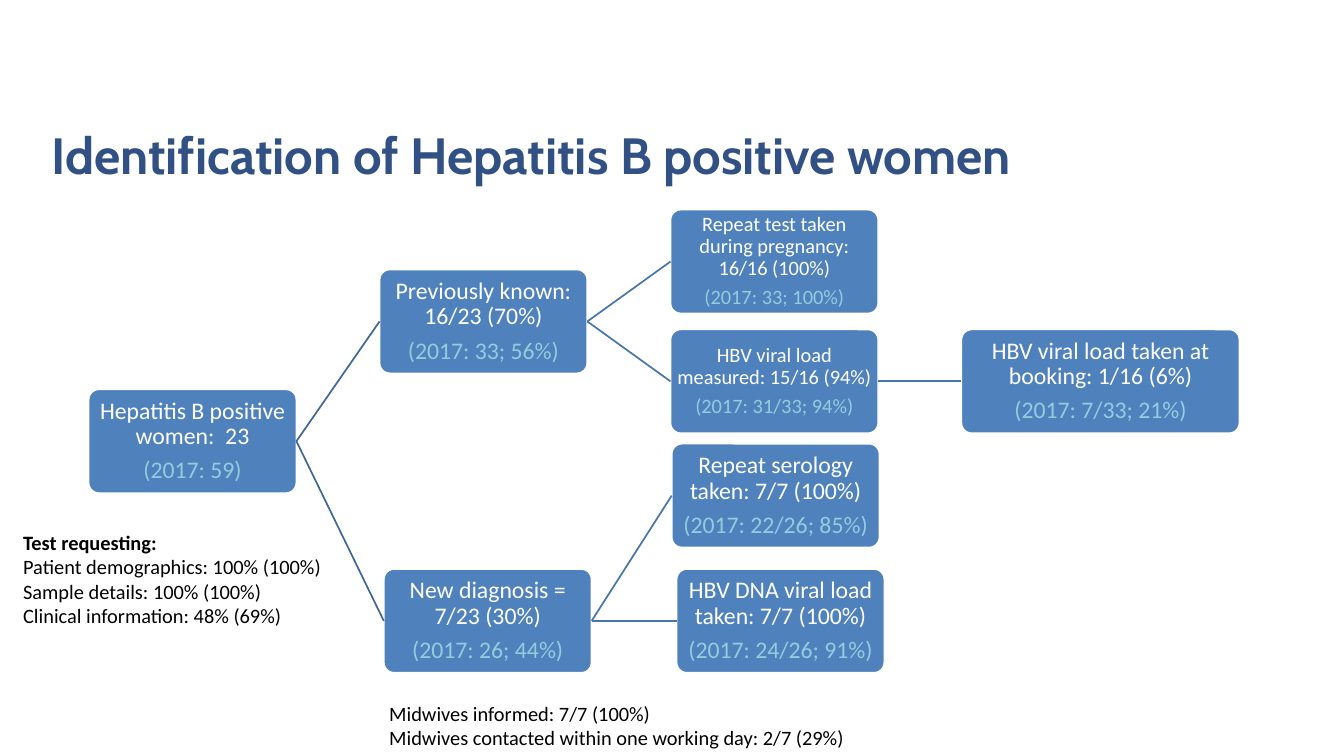
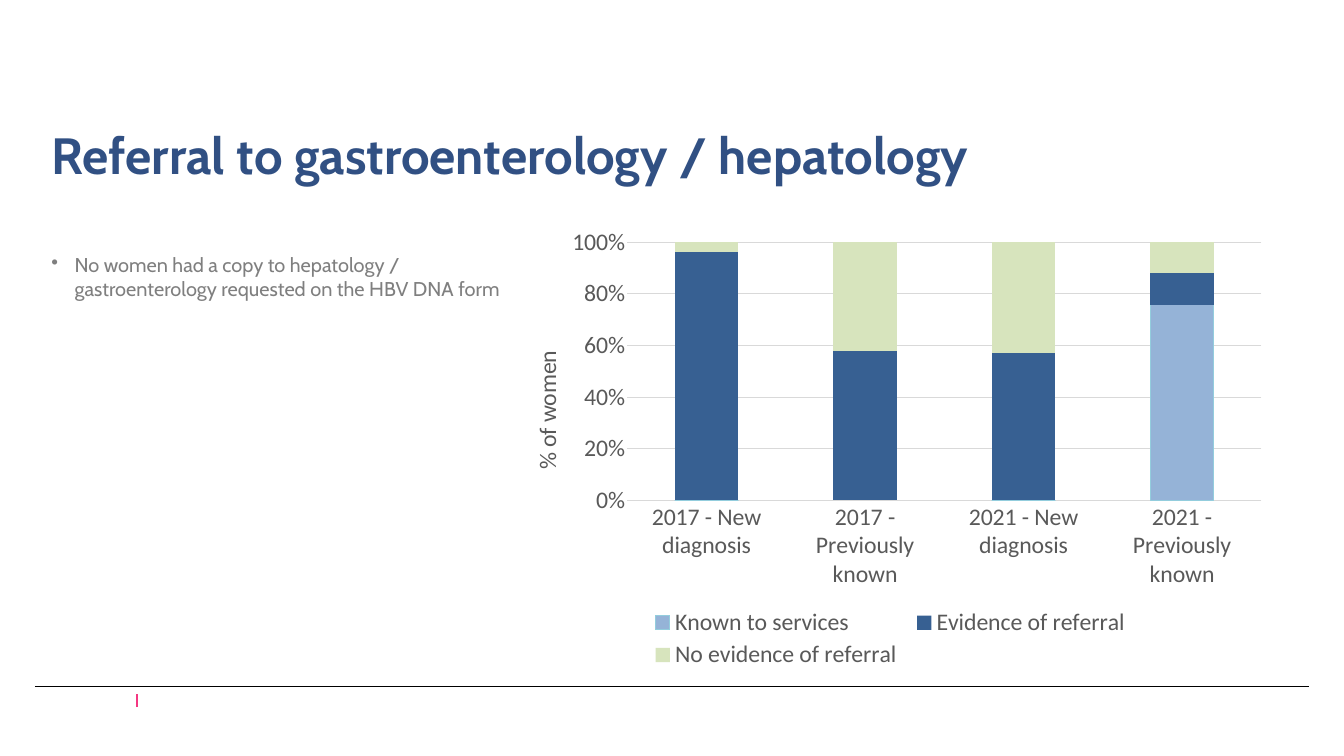
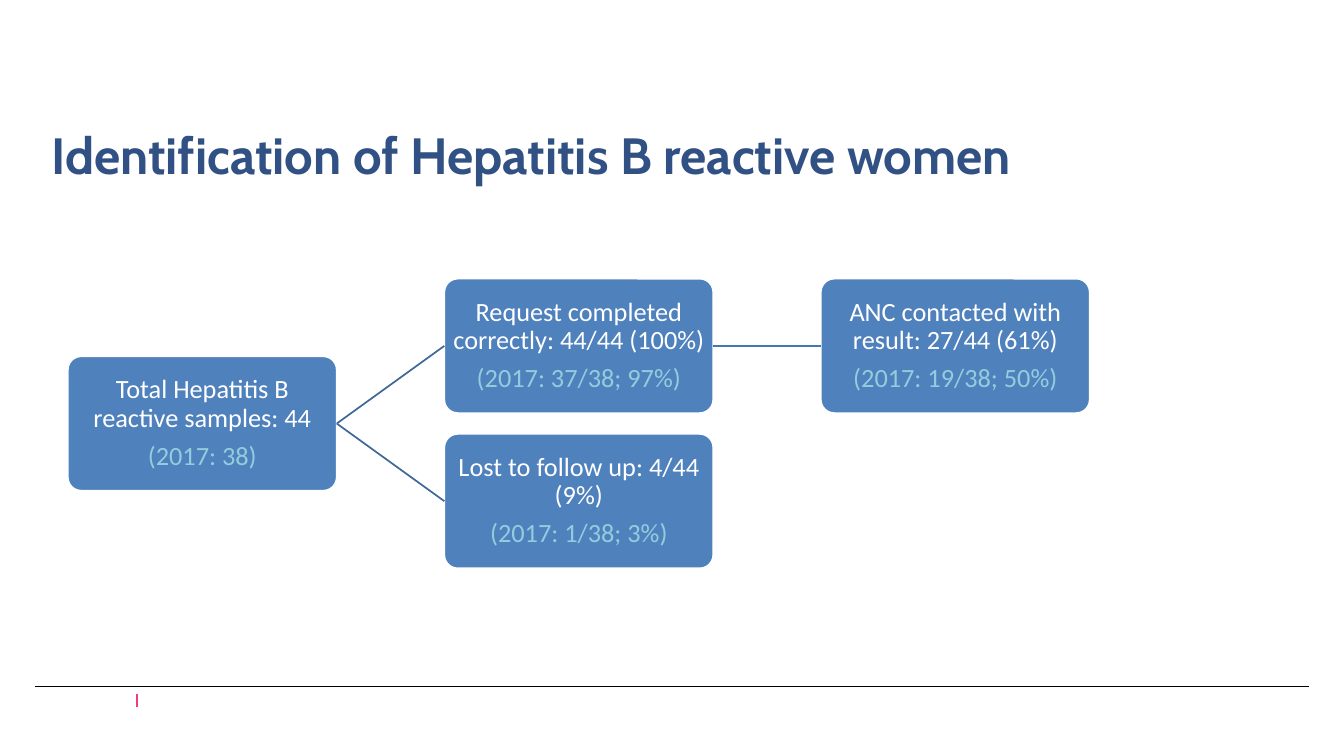
from pptx import Presentation
from pptx.chart.data import CategoryChartData
from pptx.dml.color import RGBColor
from pptx.enum.chart import XL_CHART_TYPE, XL_LEGEND_POSITION, XL_TICK_MARK
from pptx.enum.shapes import MSO_CONNECTOR, MSO_SHAPE
from pptx.enum.text import MSO_ANCHOR, PP_ALIGN
from pptx.oxml import parse_xml
from pptx.oxml.ns import nsdecls
from pptx.util import Emu, Pt

EMU_PER_PX = 9144
TITLE_FONT = "Cabin"
BODY_FONT = "Calibri"
NAVY = "315083"
BLUE = "4F81BD"
PALE_BLUE = "93CDDD"
ROOT_LINE = "3F6797"
BRANCH_LINE = "4875AC"
WHITE = "FFFFFF"
BLACK = "000000"
GREY = "7F7F7F"
CHART_TEXT = "595959"
CHART_LINE = "D9D9D9"
PINK = "F43882"


def px(*lengths):
    """Turn whole px lengths into EMU."""
    return [Emu(length * EMU_PER_PX) for length in lengths]


def rgb(colour):
    """Turn a hex string into a colour."""
    return RGBColor.from_string(colour)


def set_font(font, size, colour, name=BODY_FONT, bold=False):
    """Format a font."""
    font.size = Pt(size)
    font.color.rgb = rgb(colour)
    font.name = name
    font.bold = bold


def set_line(line, colour, width):
    """Format an outline."""
    line.color.rgb = rgb(colour)
    line.width = Pt(width)


def set_margins(frame, margin):
    """Give a text frame equal margins in px and let it wrap."""
    frame.word_wrap = True
    frame.margin_left, frame.margin_top, frame.margin_right, frame.margin_bottom = px(*[margin] * 4)


def place_part(chart, query, index, **fractions):
    """Fix a part of a chart at fractions of the chart area."""
    part = chart.element.xpath(query)[0]
    for layout in part.xpath("c:layout"):
        part.remove(layout)
    inner = '<c:layoutTarget val="inner"/>' if query.endswith("plotArea") else ""
    modes = '<c:xMode val="edge"/><c:yMode val="edge"/>'
    values = "".join(f'<c:{key} val="{value}"/>' for key, value in fractions.items())
    part.insert(index, parse_xml(
        f'<c:layout {nsdecls("c")}><c:manualLayout>{inner}{modes}{values}</c:manualLayout></c:layout>'))


class Deck:
    """The presentation's style and its current slide."""

    def __init__(self):
        """Start an empty wide presentation."""
        self.presentation = Presentation()
        self.presentation.slide_width, self.presentation.slide_height = px(2199, 1237)
        self.slide = None

    def new_slide(self, title, footer=True):
        """Add a slide with its title and footer rule."""
        self.slide = self.presentation.slides.add_slide(self.presentation.slide_layouts[5])
        shape = self.slide.shapes.title
        shape.left, shape.top, shape.width, shape.height = px(84, 202, 2030, 101)
        frame = shape.text_frame
        frame.text = title
        set_margins(frame, 0)
        frame.vertical_anchor = MSO_ANCHOR.TOP
        paragraph = frame.paragraphs[0]
        paragraph.alignment = PP_ALIGN.LEFT
        set_font(paragraph.runs[0].font, 60, NAVY, TITLE_FONT, True)
        if footer:
            self.line((57, 1122, 2141, 1122), BLACK, 0.41)
            self.line((224, 1157, 224, 1136), PINK, 1.65)

    def line(self, ends, colour, width):
        """Add a straight line between two points."""
        connector = self.slide.shapes.add_connector(MSO_CONNECTOR.STRAIGHT, *px(*ends))
        set_line(connector.line, colour, width)
        connector._element.spPr.append(parse_xml(f'<a:effectLst {nsdecls("a")}/>'))
        return connector

    def card(self, box, main_text, earlier_text, size=28, parent=None, colour=BRANCH_LINE):
        """Add a rounded card and join it to its parent."""
        shape = self.slide.shapes.add_shape(MSO_SHAPE.ROUNDED_RECTANGLE, *px(*box))
        shape.adjustments[0] = 0.1
        shape.shadow.inherit = False
        shape.fill.solid()
        shape.fill.fore_color.rgb = rgb(BLUE)
        set_line(shape.line, WHITE, 2)
        frame = shape.text_frame
        frame.text = f"{main_text}\n{earlier_text}"
        set_margins(frame, 2)
        frame.vertical_anchor = MSO_ANCHOR.MIDDLE
        for paragraph, text_colour in zip(frame.paragraphs, (WHITE, PALE_BLUE)):
            paragraph.alignment = PP_ALIGN.CENTER
            paragraph.line_spacing = 0.9
            set_font(paragraph.runs[0].font, size, text_colour)
        frame.paragraphs[0].space_after = Pt(round(size * 0.35))
        if parent is not None:
            connector = self.line((0, 0, 1, 1), colour, 2)
            connector.begin_connect(parent, 3)
            connector.end_connect(shape, 1)
        return shape

    def plain_lines(self, box, lines, heading=False):
        """Add plain lines, the first of them bold if it is a heading."""
        frame = self.slide.shapes.add_textbox(*px(*box)).text_frame
        frame.word_wrap = True
        frame.text = "\n".join(lines)
        for index, paragraph in enumerate(frame.paragraphs):
            set_font(paragraph.runs[0].font, 24, BLACK, bold=heading and index == 0)

    def bullet(self, box, text):
        """Add a bulleted paragraph."""
        frame = self.slide.shapes.add_textbox(*px(*box)).text_frame
        set_margins(frame, 0)
        frame.text = text
        paragraph = frame.paragraphs[0]
        properties = paragraph._p.get_or_add_pPr()
        indent = 38 * EMU_PER_PX
        properties.set("marL", str(indent))
        properties.set("indent", str(-indent))
        properties.append(parse_xml(f'<a:buChar {nsdecls("a")} char="•"/>'))
        set_font(paragraph.runs[0].font, 23.5, GREY, TITLE_FONT)

    def stacked_chart(self, box, categories, series_rows, axis_title):
        """Add a 100% stacked column chart."""
        data = CategoryChartData()
        data.categories = categories
        for name, values, _ in series_rows:
            data.add_series(name, values)
        chart = self.slide.shapes.add_chart(
            XL_CHART_TYPE.COLUMN_STACKED_100, *px(*box), data).chart
        set_font(chart.font, 28, CHART_TEXT)
        chart.has_title = False
        plot = chart.plots[0]
        plot.vary_by_categories = False
        plot.gap_width = 150
        plot.overlap = 100
        for series, (_, _, colour) in zip(plot.series, series_rows):
            series.format.fill.solid()
            series.format.fill.fore_color.rgb = rgb(colour)
        set_line(plot.series[0].format.line, PALE_BLUE, 0.75)
        for axis in (chart.category_axis, chart.value_axis):
            axis.major_tick_mark = XL_TICK_MARK.NONE
            axis.minor_tick_mark = XL_TICK_MARK.NONE
            set_font(axis.tick_labels.font, 28, CHART_TEXT)
        set_line(chart.category_axis.format.line, CHART_LINE, 0.75)
        value_axis = chart.value_axis
        value_axis.format.line.fill.background()
        value_axis.has_major_gridlines = True
        set_line(value_axis.major_gridlines.format.line, CHART_LINE, 0.75)
        value_axis.tick_labels.number_format = "0%"
        value_axis.tick_labels.number_format_is_linked = False
        frame = value_axis.axis_title.text_frame
        frame.text = axis_title
        set_font(frame.paragraphs[0].runs[0].font, 28, CHART_TEXT)
        chart.has_legend = True
        chart.legend.position = XL_LEGEND_POSITION.BOTTOM
        chart.legend.include_in_layout = False
        set_font(chart.legend.font, 28, CHART_TEXT)
        place_part(chart, "c:chart/c:plotArea", 0, x=0.16, y=0.05, w=0.82, h=0.57)
        place_part(chart, "c:chart/c:plotArea/c:valAx/c:title", 1, x=0.03, y=0.28)
        place_part(chart, "c:chart/c:legend", 1, x=0.18, y=0.85, w=0.64, h=0.15)


def positive_women(deck):
    """Build the tree of positive women."""
    deck.new_slide("Identification of Hepatitis B positive women", footer=False)
    first, second, third, fourth = [145 + 476 * column for column in range(4)]
    rows = [343 + 98 * row for row in range(7)]
    size = (340, 170)
    women = deck.card((first, rows[3], *size), "Hepatitis B positive women:  23", "(2017: 59)")
    known = deck.card((second, rows[1], *size), "Previously known: 16/23 (70%)",
                      "(2017: 33; 56%)", parent=women, colour=ROOT_LINE)
    deck.card((third, rows[0], *size), "Repeat test taken during pregnancy: 16/16 (100%)",
              "(2017: 33; 100%)", 24, known)
    measured = deck.card((third, rows[2], *size), "HBV viral load measured: 15/16 (94%)",
                         "(2017: 31/33; 94%)", 24, known)
    deck.card((fourth, rows[2], 455, 170), "HBV viral load taken at booking: 1/16 (6%)",
              "(2017: 7/33; 21%)", parent=measured)
    diagnosis = deck.card((second + 7, rows[6], *size), "New diagnosis = 7/23 (30%)",
                          "(2017: 26; 44%)", parent=women, colour=ROOT_LINE)
    deck.card((third + 2, 726, *size), "Repeat serology taken: 7/7 (100%)",
              "(2017: 22/26; 85%)", parent=diagnosis)
    deck.card((third + 10, rows[6], *size), "HBV DNA viral load taken: 7/7 (100%)",
              "(2017: 24/26; 91%)", parent=diagnosis)
    deck.plain_lines((627, 1142, 1016, 91), [
        "Midwives informed: 7/7 (100%)",
        "Midwives contacted within one working day: 2/7 (29%)"])
    deck.plain_lines((28, 862, 528, 172), [
        "Test requesting:",
        "Patient demographics: 100% (100%)",
        "Sample details: 100% (100%)",
        "Clinical information: 48% (69%)"], heading=True)


def referral(deck):
    """Build the referral chart."""
    deck.new_slide("Referral to gastroenterology / hepatology")
    deck.bullet((84, 414, 739, 119),
                "No women had a copy to hepatology / gastroenterology requested on the HBV DNA form")
    categories = [f"{year} - {group}" for year in (2017, 2021)
                  for group in ("New diagnosis", "Previously known")]
    deck.stacked_chart((824, 359, 1265, 742), categories, [
        ("Known to services", (0, None, 0, 75), "95B3D7"),
        ("Evidence of referral", (96, 58, 57, 12), "376092"),
        ("No evidence of referral", (4, 42, 43, 12), "D7E4BD")], "% of women")


def reactive_women(deck):
    """Build the tree of reactive women."""
    deck.new_slide("Identification of Hepatitis B reactive women")
    first, second, third = [111 + 616 * column for column in range(3)]
    top, middle, bottom = [456 + 127 * row for row in range(3)]
    size = (440, 220)
    samples = deck.card((first, middle, *size), "Total Hepatitis B reactive samples: 44",
                        "(2017: 38)", 31)
    request = deck.card((second, top, *size), "Request completed correctly: 44/44 (100%)",
                        "(2017: 37/38; 97%)", 31, samples, ROOT_LINE)
    deck.card((third, top, *size), "ANC contacted with result: 27/44 (61%)",
              "(2017: 19/38; 50%)", 31, request)
    deck.card((second, bottom, *size), "Lost to follow up: 4/44 (9%)",
              "(2017: 1/38; 3%)", 31, samples, ROOT_LINE)


def main():
    """Build and save the presentation."""
    deck = Deck()
    positive_women(deck)
    referral(deck)
    reactive_women(deck)
    deck.presentation.save("out.pptx")


if __name__ == "__main__":
    main()
